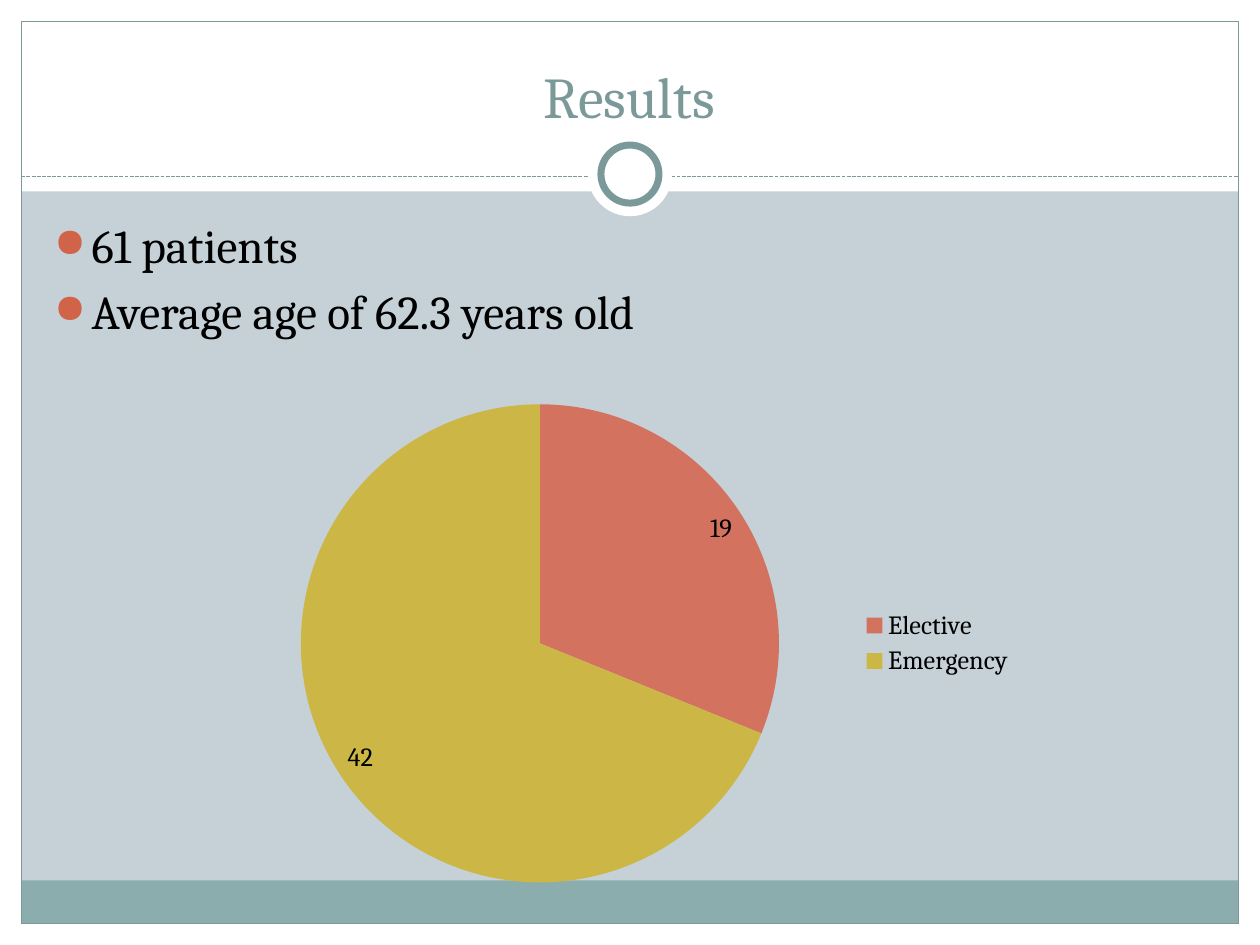
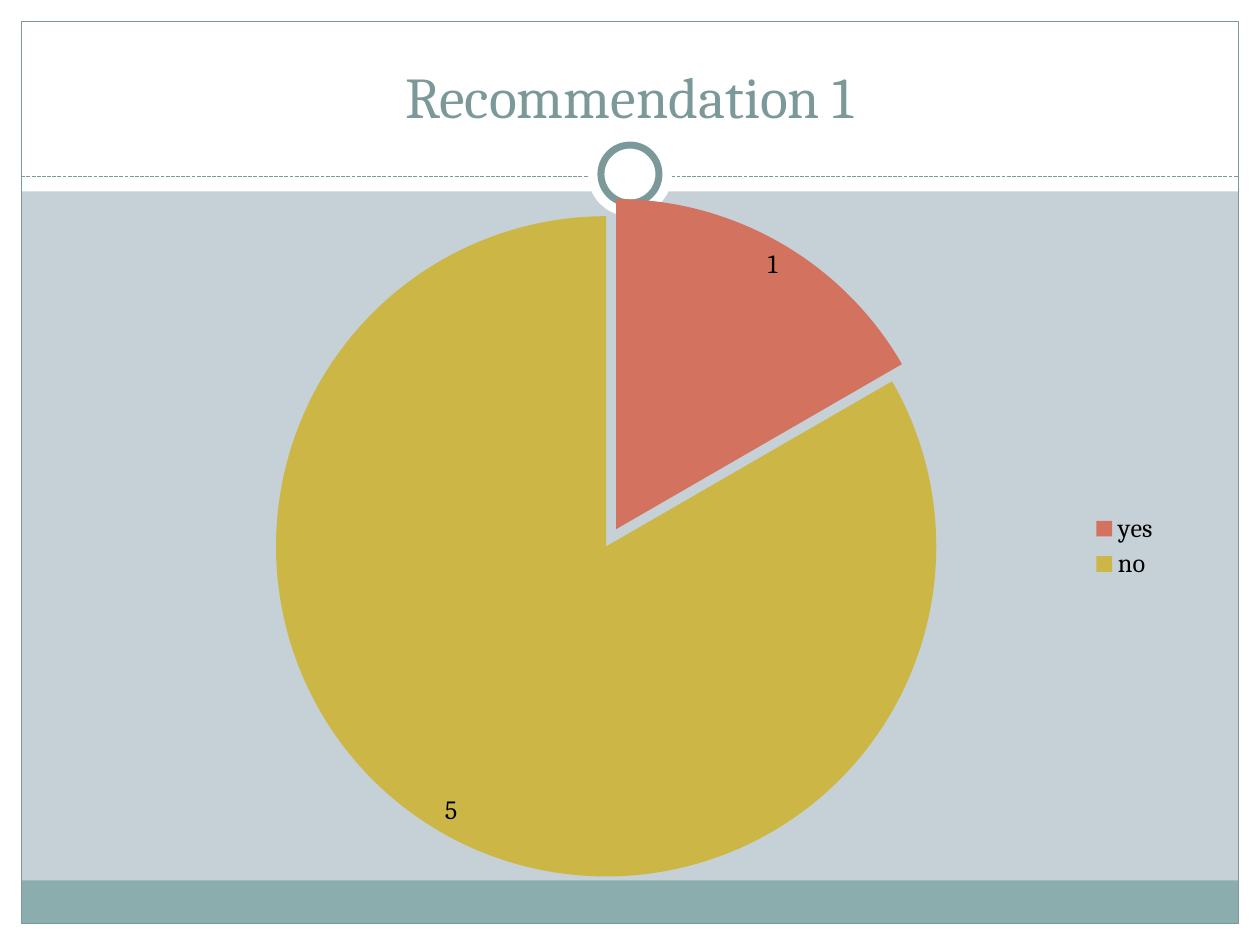
from lxml import etree
from pptx import Presentation
from pptx import util as u
from pptx.chart.data import CategoryChartData
from pptx.dml.color import RGBColor
from pptx.enum import chart as ch, dml, shapes, text
from pptx.oxml import ns

WIDTH, HEIGHT = 25.4, 19.05
MARGIN = 0.43
INNER = WIDTH - 2 * MARGIN


def color(hex_string):
    return RGBColor.from_string(hex_string)


def apply(target, values):
    for name, value in values.items():
        setattr(target, name, value)


def child(parent, tag, **attributes):
    return etree.SubElement(parent, ns.qn(tag), attributes)


class Deck:
    white, teal, band, backdrop = "FFFFFF", "7C999A", "8CADAE", "C5D1D7"
    black, bullet = "000000", "D16349"
    slices = ("D2725F", "CCB746")
    face = "Cambria"

    def __init__(self):
        self.prs = Presentation()
        apply(self.prs, {"slide_width": u.Cm(WIDTH), "slide_height": u.Cm(HEIGHT)})
        self.layout = self.prs.slide_layouts.get_by_name("Title Only")
        backdrop = self.prs.slide_master.background.fill
        backdrop.solid()
        backdrop.fore_color.rgb = color(self.backdrop)
        self.slide = None

    def font(self, font, size, hex_string):
        apply(font, {"name": self.face, "size": u.Pt(size), "bold": False})
        font.color.rgb = color(hex_string)

    def new_slide(self, heading):
        self.slide = self.prs.slides.add_slide(self.layout)
        title = self.slide.shapes.title
        apply(title, {"left": u.Cm(0.84), "top": u.Cm(0.64),
                      "width": u.Cm(23.7), "height": u.Cm(2.11)})
        apply(title.text_frame, {"text": heading, "word_wrap": True,
                                 "auto_size": text.MSO_AUTO_SIZE.NONE,
                                 "vertical_anchor": text.MSO_ANCHOR.BOTTOM})
        paragraph = title.text_frame.paragraphs[0]
        paragraph.alignment = text.PP_ALIGN.CENTER
        self.font(paragraph.font, 33, self.teal)

    def shape(self, kind, box, fill=None, line=None, weight=0.75):
        item = self.slide.shapes.add_shape(kind, *map(u.Cm, box))
        item.shadow.inherit = False
        if fill:
            item.fill.solid()
            item.fill.fore_color.rgb = color(fill)
        else:
            item.fill.background()
        if line:
            item.line.color.rgb = color(line)
            item.line.width = u.Pt(weight)
        else:
            item.line.fill.background()

    def rect(self, *box, **style):
        self.shape(shapes.MSO_SHAPE.RECTANGLE, box, **style)

    def circle(self, center_x, center_y, diameter, **style):
        box = (center_x - diameter / 2, center_y - diameter / 2, diameter, diameter)
        self.shape(shapes.MSO_SHAPE.OVAL, box, **style)

    def divider(self, y):
        rule = self.slide.shapes.add_connector(
            shapes.MSO_CONNECTOR.STRAIGHT, u.Cm(MARGIN), u.Cm(y), u.Cm(WIDTH - MARGIN), u.Cm(y))
        rule.line.color.rgb = color(self.teal)
        apply(rule.line, {"width": u.Pt(0.75), "dash_style": dml.MSO_LINE.SQUARE_DOT})
        child(rule._element.spPr, "a:effectLst")

    def share_frame(self):
        frame = [item for item in self.slide.shapes if not item.is_placeholder]
        for number, item in enumerate(frame, 100):
            item._element.xpath(".//p:cNvPr")[0].set("id", str(number))
            self.layout.shapes._spTree.append(item._element)

    def bullets(self, box, lines):
        frame = self.slide.shapes.add_textbox(*map(u.Cm, box)).text_frame
        frame.word_wrap = True
        for index, line in enumerate(lines):
            paragraph = frame.add_paragraph() if index else frame.paragraphs[0]
            paragraph.text = line
            if index:
                paragraph.space_before = u.Pt(5.4)
            properties = paragraph._p.get_or_add_pPr()
            indent = u.Cm(0.76)
            properties.set("marL", str(indent))
            properties.set("indent", str(-indent))
            child(child(properties, "a:buClr"), "a:srgbClr", val=self.bullet)
            child(properties, "a:buSzPct", val="85000")
            child(properties, "a:buChar", char="●")
            self.font(paragraph.font, 27, self.black)

    def pie(self, box, counts, explosion=0):
        data = CategoryChartData()
        data.categories = list(counts)
        data.add_series("Series 1", list(counts.values()))
        chart = self.slide.shapes.add_chart(
            ch.XL_CHART_TYPE.PIE, *map(u.Cm, box), data).chart
        apply(chart, {"has_title": False, "has_legend": True})
        self.font(chart.font, 15, self.black)
        apply(chart.legend, {"position": ch.XL_LEGEND_POSITION.RIGHT,
                             "include_in_layout": False})
        plot = chart.plots[0]
        apply(plot, {"vary_by_categories": True, "has_data_labels": True})
        apply(plot.data_labels, {"show_value": True, "show_percentage": False,
                                 "position": ch.XL_LABEL_POSITION.INSIDE_END})
        for index, hex_string in enumerate(self.slices):
            wedge = plot.series[0].points[index].format
            wedge.fill.solid()
            wedge.fill.fore_color.rgb = color(hex_string)
            wedge.line.fill.background()
        if explosion:
            first_slice = plot.series[0]._element.find(ns.qn("c:dPt"))
            offset = etree.Element(ns.qn("c:explosion"), val=str(explosion))
            first_slice.find(ns.qn("c:spPr")).addprevious(offset)


def draw_frame(deck):
    deck.rect(0, HEIGHT - MARGIN, WIDTH, MARGIN, fill=deck.white)
    deck.rect(0, 0, WIDTH, 3.86, fill=deck.white)
    for left in (0, WIDTH - MARGIN):
        deck.rect(left, 0, MARGIN, HEIGHT, fill=deck.white)
    deck.rect(MARGIN, 17.75, INNER, 0.87, fill=deck.band)
    deck.rect(MARGIN, MARGIN, INNER, HEIGHT - 2 * MARGIN, line=deck.teal)
    deck.divider(3.56)
    deck.circle(WIDTH / 2, 3.51, 1.7, fill=deck.white)
    deck.circle(WIDTH / 2, 3.51, 1.17, fill=deck.white, line=deck.teal, weight=4)
    deck.share_frame()


def main():
    deck = Deck()
    deck.new_slide("Results")
    draw_frame(deck)
    deck.bullets((0.84, 4.24, 23.62, 12.7),
                 ["61 patients", "Average age of 62.3 years old"])
    deck.pie((4.47, 7.8, 16.23, 10.34), {"Elective": 19, "Emergency": 42})

    deck.new_slide("Recommendation 1")
    deck.pie((2.51, 3.61, 21.11, 14.81), {"yes": 1, "no": 5}, explosion=6)
    deck.prs.save("out.pptx")


if __name__ == "__main__":
    main()
